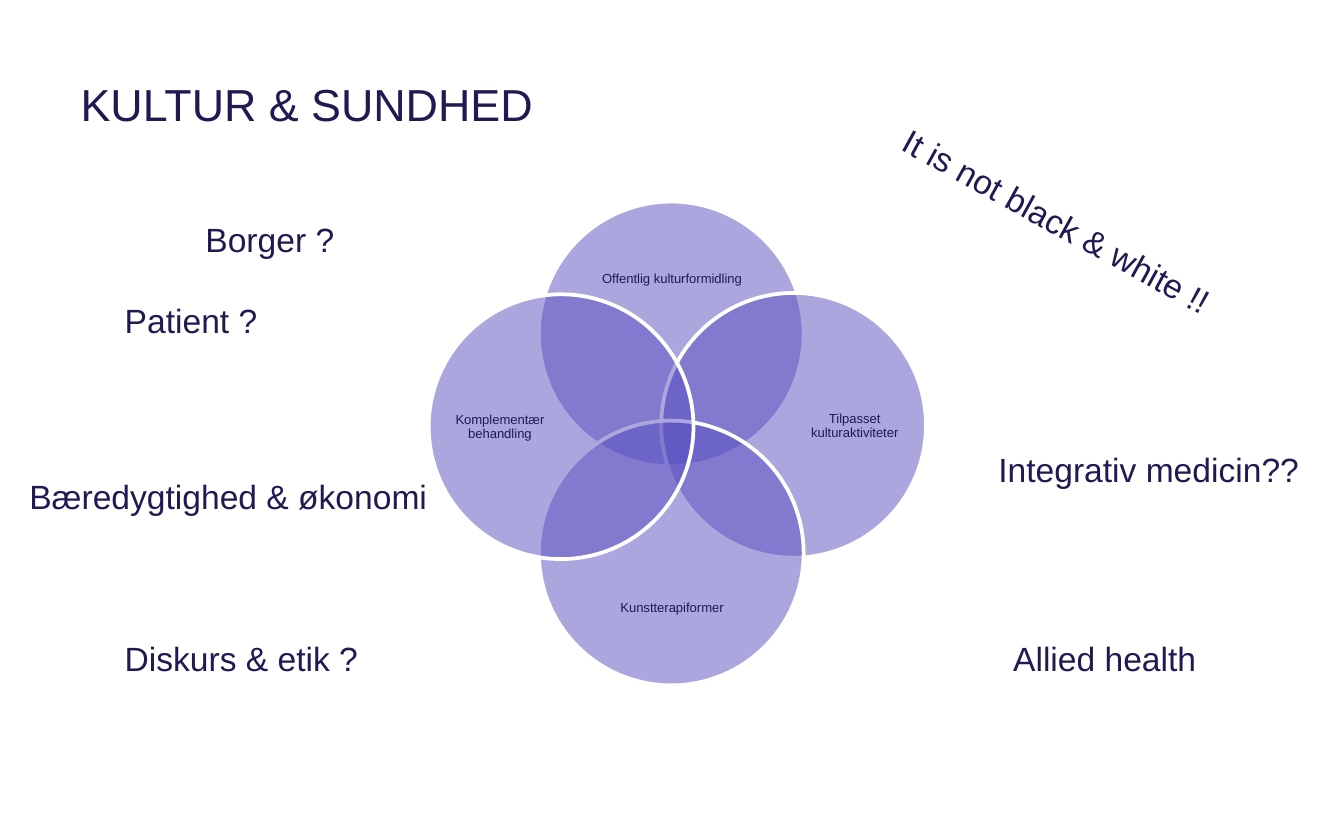
import pptx
import pptx.util
import pptx.dml.color
import pptx.enum.shapes
import pptx.enum.text
import pptx.oxml
import pptx.oxml.ns

PX = 9144
INK = "211A52"
VIOLET = "594FBF"
WHITE = "FFFFFF"
DIAMETER = 197


def color(hex_code):
    return pptx.dml.color.RGBColor.from_string(hex_code)


def write(shape, text, size, alignment):
    shape.text_frame.text = text
    paragraph = shape.text_frame.paragraphs[0]
    paragraph.alignment = alignment
    paragraph.font.name = "Arial"
    paragraph.font.size = pptx.util.Pt(size)
    paragraph.font.color.rgb = color(INK)
    return paragraph


align = pptx.enum.text.PP_ALIGN
middle = pptx.enum.text.MSO_ANCHOR.MIDDLE

presentation = pptx.Presentation()
presentation.slide_width = 1000 * PX
presentation.slide_height = 625 * PX
slide = presentation.slides.add_slide(presentation.slide_layouts[5])

title = slide.shapes.title
title.left, title.top, title.width, title.height = [n * PX for n in (50, 25, 900, 104)]
title.text_frame.vertical_anchor = middle
write(title, "KULTUR & SUNDHED", 24, align.LEFT)

circles = [
    (401, 150, "Offentlig kulturformidling", (424, 176, 152, 63)),
    (492, 218, "Tilpasset kulturaktiviteter", (598, 241, 76, 152)),
    (401, 313, "Kunstterapiformer", (424, 421, 152, 63)),
    (319, 219, "Komplementær behandling", (334, 242, 76, 152)),
]
venn = slide.shapes.add_group_shape()
for left, top, text, label_box in circles:
    circle = venn.shapes.add_shape(
        pptx.enum.shapes.MSO_SHAPE.OVAL, left * PX, top * PX, DIAMETER * PX, DIAMETER * PX)
    circle.shadow.inherit = False
    circle.fill.solid()
    circle.fill.fore_color.rgb = color(VIOLET)
    fill_color = circle.fill._xPr.find(".//" + pptx.oxml.ns.qn("a:srgbClr"))
    fill_color.append(pptx.oxml.parse_xml(
        f'<a:alpha {pptx.oxml.ns.nsdecls("a")} val="50000"/>'))
    circle.line.color.rgb = color(WHITE)
    circle.line.width = pptx.util.Pt(2)

    label = venn.shapes.add_textbox(*[n * PX for n in label_box])
    frame = label.text_frame
    frame.word_wrap = True
    frame.vertical_anchor = middle
    frame.margin_left = frame.margin_right = frame.margin_top = frame.margin_bottom = 0
    write(label, text, 7, align.CENTER).line_spacing = 0.9

notes = [
    ("It is not black & white !!", 645, 158, 331, 28.9, True),
    ("Patient ?", 83, 218, 120, 0, False),
    ("Borger ?", 143, 158, 118, 0, True),
    ("Integrativ medicin??", 733, 329, 246, 0, False),
    ("Allied health", 744, 470, 158, 0, False),
    ("Diskurs & etik ?", 83, 470, 196, 0, False),
    ("Bæredygtighed & økonomi", 12, 349, 319, 0, False),
]
for text, left, top, width, rotation, wraps in notes:
    note = slide.shapes.add_textbox(left * PX, top * PX, width * PX, 40 * PX)
    note.rotation = rotation
    note.text_frame.word_wrap = wraps
    note.text_frame.auto_size = pptx.enum.text.MSO_AUTO_SIZE.SHAPE_TO_FIT_TEXT
    write(note, text, 18, align.LEFT)

presentation.save("out.pptx")
